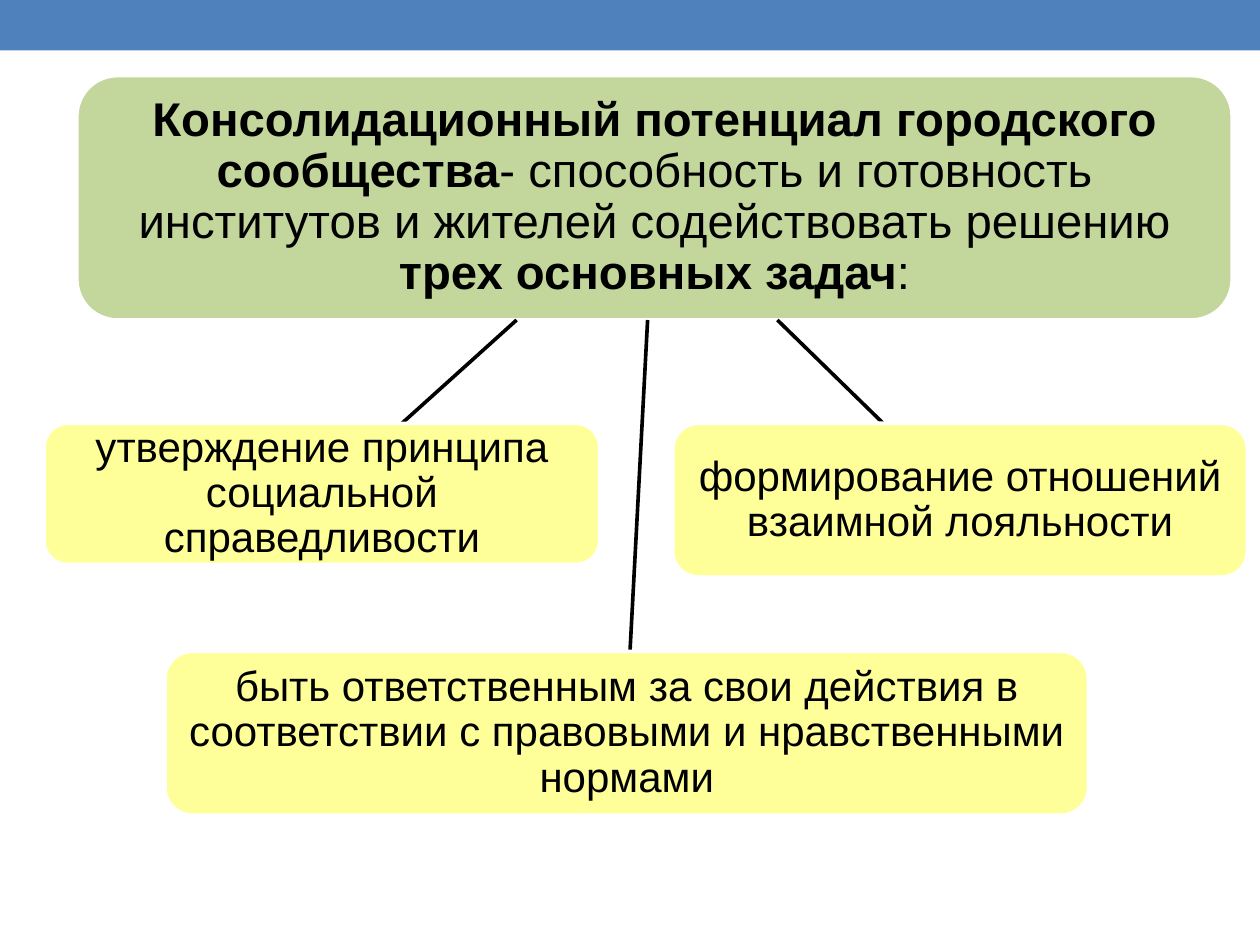
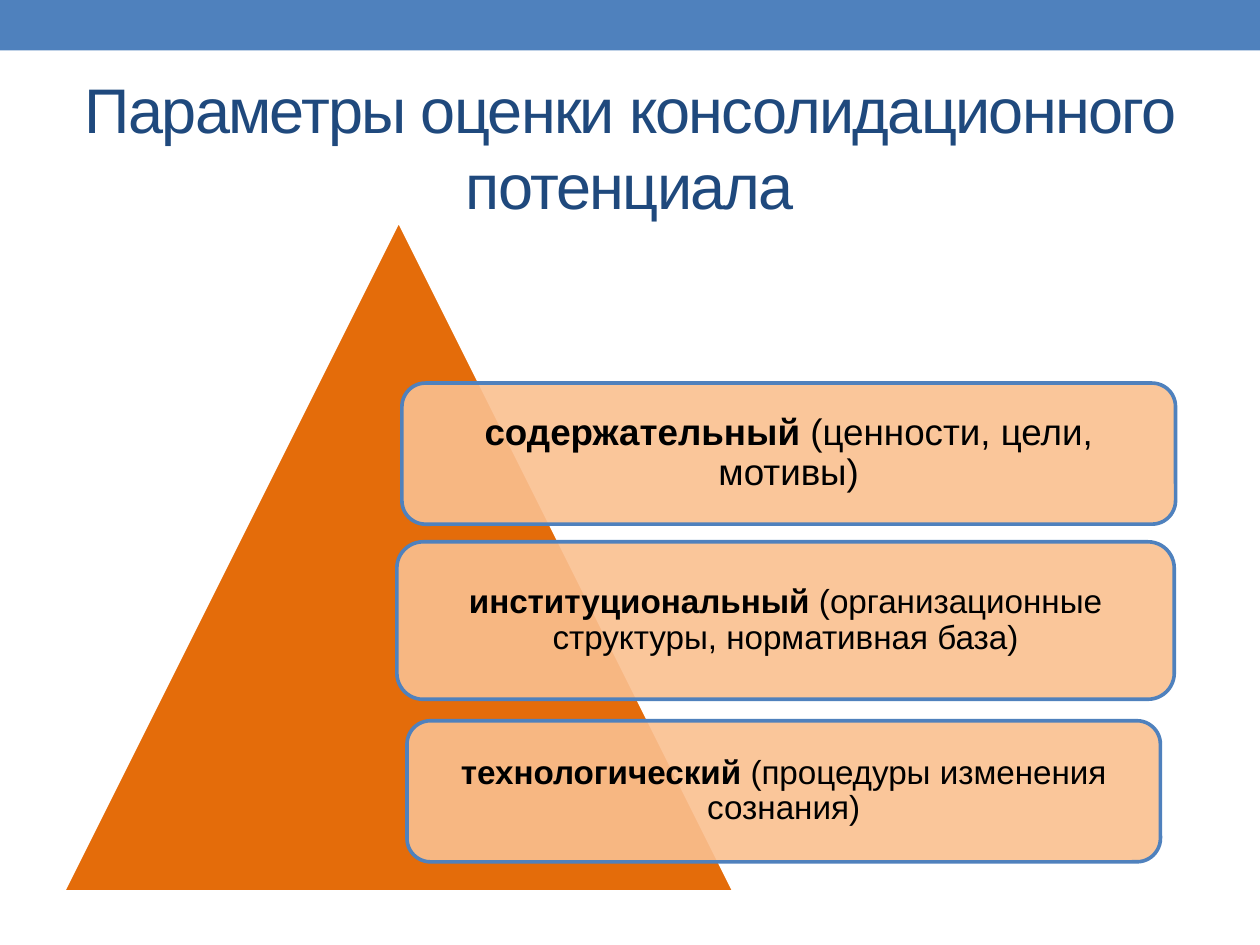
from lxml.etree import SubElement
from pptx import Presentation
from pptx.dml.color import RGBColor
from pptx.enum.shapes import MSO_CONNECTOR, MSO_SHAPE
from pptx.enum.text import MSO_ANCHOR, PP_ALIGN
from pptx.oxml.ns import qn
from pptx.util import Emu, Pt

EMU_PER_PX = 9144  # 100 px to the inch
SLIDE_SIZE = (1000, 750)
FONT = "Arial"
OUTLINE = Pt(2.08)
COLORS = {
    "band": "4F81BD",
    "title": "1F497D",
    "text": "000000",
    "white": "FFFFFF",
    "definition": "C3D69B",
    "task": "FFFF99",
    "pyramid": "E46C0A",
    "parameter": "FAC090",
}

DEFINITION = [
    ("Консолидационный потенциал городского сообщества", True),
    ("- способность и готовность институтов и жителей содействовать решению ", False),
    ("трех основных задач", True),
    (":", False),
]
# text, box, link from the definition to the task
TASKS = [
    ("формирование отношений взаимной лояльности",
     (534, 336, 456, 122), (617, 254, 701, 336)),
    ("быть ответственным за свои действия в соответствии с правовыми и нравственными нормами",
     (131, 517, 733, 130), (514, 254, 500, 517)),
    ("утверждение принципа социальной справедливости",
     (35, 336, 441, 112), (410, 254, 319, 336)),
]
# name, explanation, box, text size, margin
PARAMETERS = [
    ("содержательный ", "(ценности, цели, мотивы)", (319, 304, 614, 112), 21, 9),
    ("институциональный", " (организационные структуры, нормативная база)",
     (315, 430, 617, 125), 19, 8),
    ("технологический ", "(процедуры изменения сознания)", (323, 572, 598, 112), 19, 8),
]


def px(*lengths):
    return [Emu(length * EMU_PER_PX) for length in lengths]


def rgb(name):
    return RGBColor.from_string(COLORS[name])


def add_figure(slide, preset, box, fill, line=None):
    figure = slide.shapes.add_shape(preset, *px(*box))
    figure.shadow.inherit = False
    figure.fill.solid()
    figure.fill.fore_color.rgb = rgb(fill)
    if line:
        figure.line.color.rgb = rgb(line)
        figure.line.width = OUTLINE
    else:
        figure.line.fill.background()
    return figure


def write(holder, parts, size, color="text", margin=7, spacing=0.9):
    """Fill the holder with one centred paragraph of (text, bold) parts."""
    frame = holder.text_frame
    frame.word_wrap = True
    frame.vertical_anchor = MSO_ANCHOR.MIDDLE
    (inset,) = px(margin)
    frame.margin_left = frame.margin_right = inset
    frame.margin_top = frame.margin_bottom = inset
    paragraph = frame.paragraphs[0]
    paragraph.alignment = PP_ALIGN.CENTER
    paragraph.line_spacing = spacing
    paragraph.font.name = FONT
    paragraph.font.size = Pt(size)
    paragraph.font.color.rgb = rgb(color)
    for text, bold in parts:
        run = paragraph.add_run()
        run.text = text
        run.font.name = FONT
        run.font.size = Pt(size)
        run.font.color.rgb = rgb(color)
        run.font.bold = bold


def add_card(slide, box, parts, size, fill, line="white", margin=7):
    card = add_figure(slide, MSO_SHAPE.ROUNDED_RECTANGLE, box, fill, line)
    write(card, parts, size, margin=margin)
    return card


def set_opacity(figure, percent):
    color = figure.element.spPr.find(qn("a:solidFill")).find(qn("a:srgbClr"))
    SubElement(color, qn("a:alpha"), val=str(percent * 1000))


def add_link(slide, ends):
    link = slide.shapes.add_connector(MSO_CONNECTOR.STRAIGHT, *px(*ends))
    link.line.color.rgb = rgb("text")
    link.line.width = OUTLINE
    SubElement(link.element.spPr, qn("a:effectLst"))


def add_title(slide, text):
    title = slide.shapes.add_textbox(*px(50, 58, 900, 116))
    write(title, [(text, False)], 36, "title", spacing=1.0)
    for properties in title.element.iter(qn("a:rPr")):
        properties.set("spc", "-100")


def add_banded_slide(deck):
    slide = deck.slides.add_slide(deck.slide_layouts[6])
    add_figure(slide, MSO_SHAPE.RECTANGLE, (0, 0, SLIDE_SIZE[0], 40), "band")
    return slide


def build_tasks_slide(deck):
    slide = add_banded_slide(deck)
    add_card(slide, (61, 60, 917, 194), DEFINITION, 27, "definition")
    for text, box, link in TASKS:
        add_link(slide, link)
        add_card(slide, box, [(text, False)], 24, "task")


def build_parameters_slide(deck):
    slide = add_banded_slide(deck)
    add_title(slide, "Параметры оценки консолидационного потенциала")
    add_figure(slide, MSO_SHAPE.ISOSCELES_TRIANGLE, (50, 175, 533, 533), "pyramid", "white")
    for name, explanation, box, size, margin in PARAMETERS:
        parts = [(name, True), (explanation, False)]
        card = add_card(slide, box, parts, size, "parameter", "band", margin)
        set_opacity(card, 90)


def main():
    deck = Presentation()
    deck.slide_width, deck.slide_height = px(*SLIDE_SIZE)
    build_tasks_slide(deck)
    build_parameters_slide(deck)
    deck.save("out.pptx")


if __name__ == "__main__":
    main()
